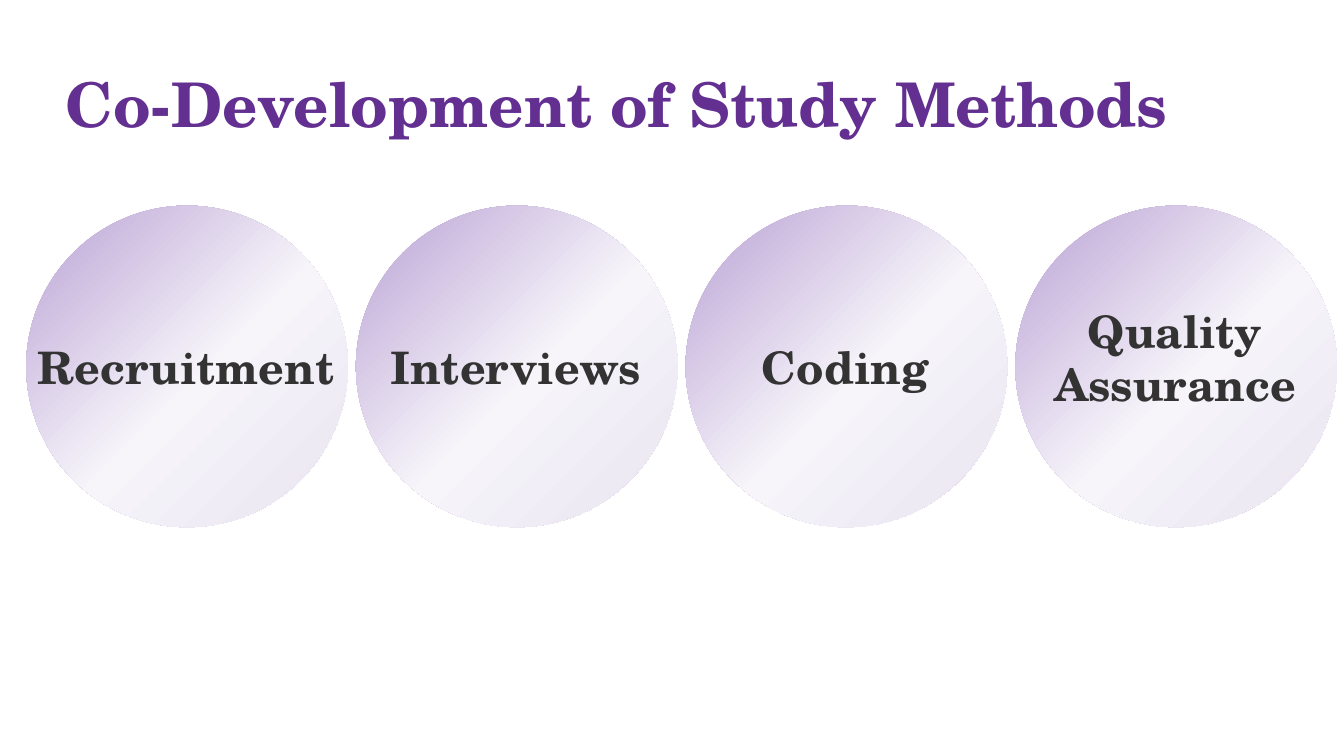
from copy import deepcopy

from pptx import Presentation
from pptx.dml.color import RGBColor
from pptx.enum.shapes import MSO_SHAPE
from pptx.enum.text import MSO_ANCHOR, MSO_AUTO_SIZE, PP_ALIGN
from pptx.oxml.ns import qn
from pptx.util import Inches, Pt

PURPLE = RGBColor(0x63, 0x30, 0x92)
CHARCOAL = RGBColor(0x33, 0x33, 0x33)
LILAC = RGBColor(0xB9, 0xA1, 0xD4)
MIST = RGBColor(0xF7, 0xF5, 0xFA)
LAVENDER = RGBColor(0xE9, 0xE3, 0xF1)
CIRCLE_STOPS = [(0, LILAC), (0.54, MIST), (1, LAVENDER)]

CIRCLE_LEFT, CIRCLE_TOP, DIAMETER, PITCH = 0.26, 2.04, 3.19, 3.27
METHODS = [
    ("Recruitment", 3.32, 3.35, 0.64),
    ("Interviews", 3.32, 3.35, 0.64),
    ("Coding", 3.32, 3.35, 0.64),
    ("Quality Assurance", 2.96, 2.99, 1.18),
]


class SlideBuilder:
    """Hold the text style and the slide, and add its elements."""

    def __init__(self, slide, font_name):
        self.slide = slide
        self.font_name = font_name

    def circle(self, left, top, diameter):
        """Add a borderless circle with a diagonal gradient."""
        circle = self.slide.shapes.add_shape(
            MSO_SHAPE.OVAL, Inches(left), Inches(top), Inches(diameter), Inches(diameter))
        circle.shadow.inherit = False
        circle.line.fill.background()
        circle.fill.gradient()
        circle.fill.gradient_angle = 315
        stop_list = circle.element.spPr.find(".//" + qn("a:gsLst"))
        stop_list.append(deepcopy(stop_list[-1]))
        for stop, (position, color) in zip(circle.fill.gradient_stops, CIRCLE_STOPS):
            stop.position = position
            stop.color.rgb = color

    def text(self, content, left, top, width, height, size, color):
        """Add a bold text box and return it."""
        box = self.slide.shapes.add_textbox(
            Inches(left), Inches(top), Inches(width), Inches(height))
        box.text_frame.word_wrap = True
        paragraph = box.text_frame.paragraphs[0]
        paragraph.text = content
        font = paragraph.font
        font.name, font.size, font.bold = self.font_name, Pt(size), True
        font.color.rgb = color
        return box

    def title(self, content):
        """Add the slide title, centred vertically in its band."""
        box = self.text(content, 0.55, 0.34, 11.5, 1.45, 44, PURPLE)
        box.text_frame.vertical_anchor = MSO_ANCHOR.MIDDLE
        box.text_frame.paragraphs[0].line_spacing = 0.9

    def label(self, content, center, top, width, height):
        """Add a label centred on the given horizontal position."""
        box = self.text(content, center - width / 2, top, width, height, 32, CHARCOAL)
        box.text_frame.auto_size = MSO_AUTO_SIZE.SHAPE_TO_FIT_TEXT
        box.text_frame.paragraphs[0].alignment = PP_ALIGN.CENTER


def main():
    """Build the slide and save the deck."""
    deck = Presentation()
    deck.slide_width, deck.slide_height = Inches(13.33), Inches(7.5)
    page = SlideBuilder(deck.slides.add_slide(deck.slide_layouts[6]), "TeX Gyre Schola")
    page.title("Co-Development of Study Methods")
    for index, (name, top, width, height) in enumerate(METHODS):
        left = CIRCLE_LEFT + index * PITCH
        page.circle(left, CIRCLE_TOP, DIAMETER)
        page.label(name, left + DIAMETER / 2 - 0.01, top, width, height)
    deck.save("out.pptx")


if __name__ == "__main__":
    main()
